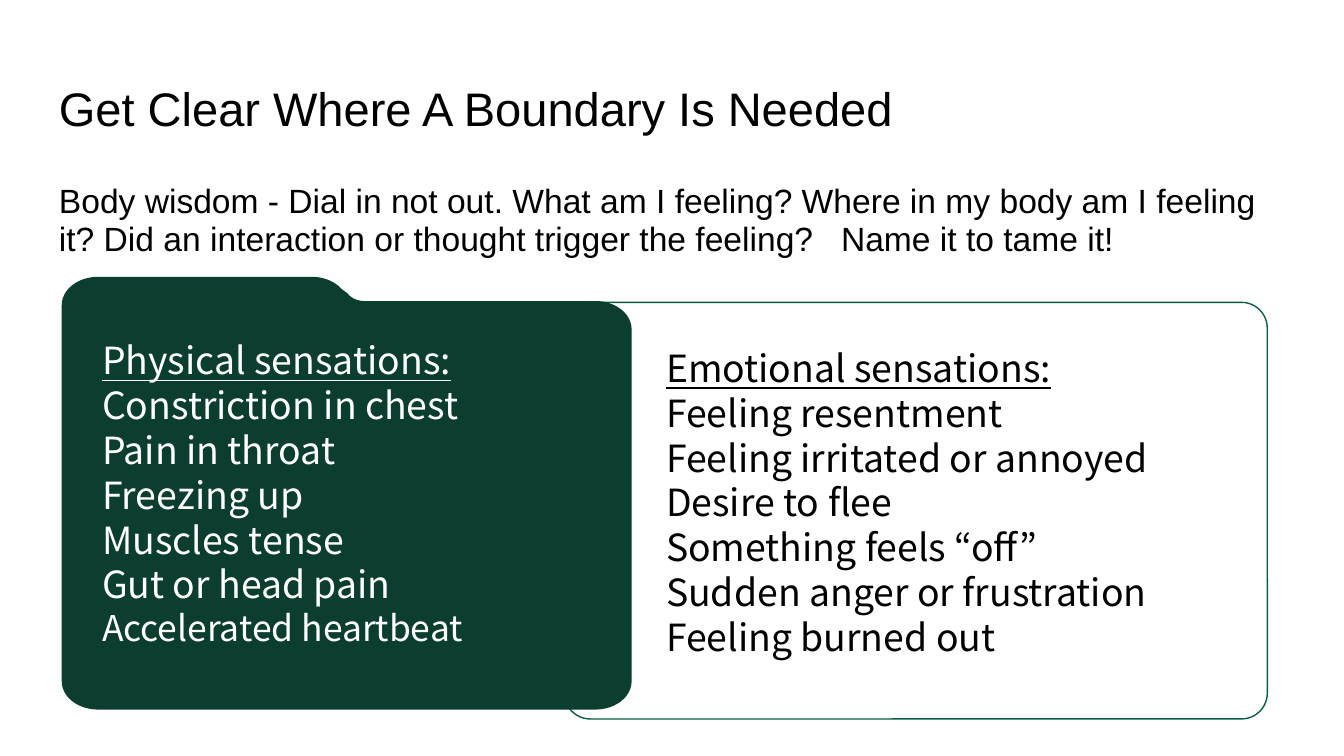
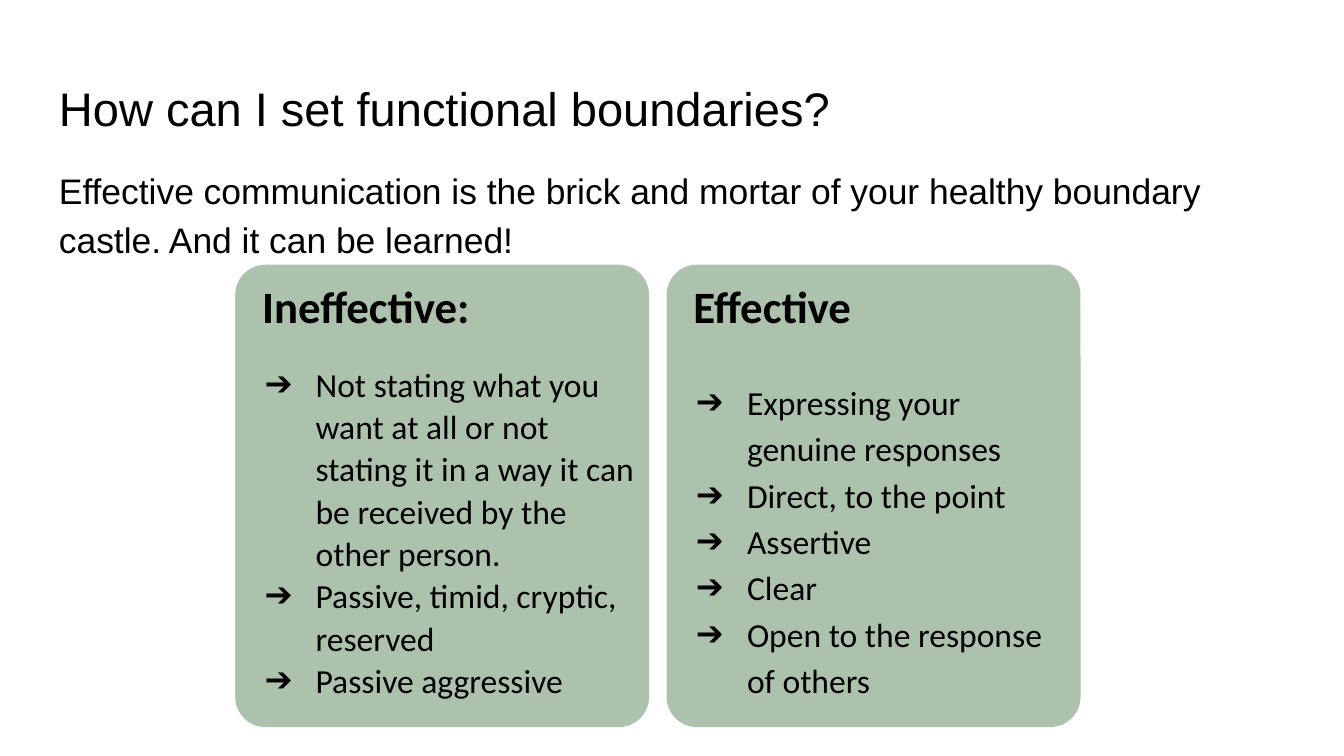
import math

from lxml import etree
from pptx import Presentation
from pptx.dml.color import RGBColor
from pptx.enum import shapes, text
from pptx.oxml import ns
from pptx.util import Inches, Pt

COLORS = {"ink": "000000", "white": "FEFEFE", "folder": "0C3E30",
          "outline": "085D46", "card": "ADC2AC"}
TITLE_FONT, PANEL_FONT, CARD_FONT = "Arial", "Noto Sans CJK KR", "Calibri"

SENSATIONS = {
    "title": "Get Clear Where A Boundary Is Needed",
    "intro": "Body wisdom - Dial in not out. What am I feeling? Where in my body "
             "am I feeling it? Did an interaction or thought trigger the feeling?   "
             "Name it to tame it!",
    "physical": ["Physical sensations:", "Constriction in chest", "Pain in throat",
                 "Freezing up", "Muscles tense", "Gut or head pain",
                 "Accelerated heartbeat"],
    "emotional": ["Emotional sensations:", "Feeling resentment",
                  "Feeling irritated or annoyed", "Desire to flee",
                  "Something feels “off”", "Sudden anger or frustration",
                  "Feeling burned out"],
}
COMMUNICATION = {
    "title": "How can I set functional boundaries?",
    "intro": "Effective communication is the brick and mortar of your healthy "
             "boundary castle. And it can be learned!",
    "cards": [
        ("Ineffective:", 1.05,
         ["Not stating what you want at all or not stating it in a way it can be "
          "received by the other person.",
          "Passive, timid, cryptic, reserved", "Passive aggressive"]),
        ("Effective", 1.15,
         ["Expressing your genuine responses", "Direct, to the point", "Assertive",
          "Clear", "Open to the response of others"]),
    ],
}

CARD_LEFT, CARD_TOP, CARD_WIDTH, CARD_HEIGHT, CARD_GAP = 1.75, 1.97, 3.08, 3.44, 0.13
LIST_DROP = 0.63


def rgb(name):
    return RGBColor.from_string(COLORS[name])


def write(shape, lines, font, size, color="ink", spacing=None, bold=False,
          insets=(0.1, 0.1, 0.1, 0.1), anchor=text.MSO_ANCHOR.TOP, bullet=None):
    """Fill a shape with one paragraph per line; insets run left, top, right, bottom."""
    frame = shape.text_frame
    frame.word_wrap = True
    frame.vertical_anchor = anchor
    (frame.margin_left, frame.margin_top,
     frame.margin_right, frame.margin_bottom) = map(Inches, insets)
    for number, line in enumerate(lines):
        para = frame.add_paragraph() if number else frame.paragraphs[0]
        para.text = line
        para.alignment = text.PP_ALIGN.LEFT
        if spacing:
            para.line_spacing = spacing
        if bullet:
            add_bullet(para, bullet, font)
        para.font.name = font
        para.font.size = Pt(size)
        para.font.bold = bold
        para.font.color.rgb = rgb(color)
    return frame.paragraphs


def add_bullet(para, symbol, font):
    props = para._p.get_or_add_pPr()
    props.set("marL", str(Inches(0.5)))
    props.set("indent", str(Inches(-0.38)))
    tint = etree.SubElement(props, ns.qn("a:buClr"))
    etree.SubElement(tint, ns.qn("a:srgbClr"), val=COLORS["ink"])
    etree.SubElement(props, ns.qn("a:buFont"), typeface=font)
    etree.SubElement(props, ns.qn("a:buChar"), char=symbol)


def add_text(page, left, top, width, height, lines, font, size, **style):
    box = page.shapes.add_textbox(*map(Inches, (left, top, width, height)))
    return write(box, lines, font, size, **style)


def paint(shape, fill=None, line=None):
    shape.shadow.inherit = False
    if fill:
        shape.fill.solid()
        shape.fill.fore_color.rgb = rgb(fill)
    else:
        shape.fill.background()
    if line:
        shape.line.color.rgb = rgb(line)
        shape.line.width = Pt(0.75)
    else:
        shape.line.fill.background()


def add_rounded(page, left, top, width, height, rounding, **colors):
    shape = page.shapes.add_shape(shapes.MSO_SHAPE.ROUNDED_RECTANGLE,
                                  *map(Inches, (left, top, width, height)))
    shape.adjustments[0] = rounding
    paint(shape, **colors)
    return shape


def arc(center_x, center_y, radius_x, radius_y, start, end, steps=12):
    """Points along an ellipse, in degrees clockwise from the right."""
    angles = [math.radians(start + (end - start) * i / steps) for i in range(steps + 1)]
    return [(Inches(center_x + radius_x * math.cos(a)),
             Inches(center_y + radius_y * math.sin(a))) for a in angles]


def add_folder(page):
    left, top, right, bottom = 0.46, 2.06, 4.7, 5.28
    shoulder, tab_end, notch_end = 2.24, 2.32, 2.71
    rx, ry = 0.27, 0.21
    points = (arc(left + rx, top + ry, rx, ry, 180, 270)
              + arc(tab_end, top + ry, rx, ry, 270, 325)
              + arc(notch_end, shoulder - 0.11, 0.14, 0.11, 150, 90)
              + arc(right - rx, shoulder + ry, rx, ry, 270, 360)
              + arc(right - rx, bottom - ry, rx, ry, 0, 90)
              + arc(left + rx, bottom - ry, rx, ry, 90, 180))
    builder = page.shapes.build_freeform(*points[0], scale=1.0)
    builder.add_line_segments(points[1:], close=True)
    folder = builder.convert_to_shape()
    paint(folder, fill="folder")
    return folder


def add_page(deck, content, intro_top, intro_size, intro_spacing):
    page = deck.slides.add_slide(deck.slide_layouts[6])
    add_text(page, 0.34, 0.49, 9.32, 0.63, [content["title"]], TITLE_FONT, 25.2)
    add_text(page, 0.34, intro_top, 9.32, 3.74, [content["intro"]], TITLE_FONT,
             intro_size, spacing=intro_spacing)
    return page


def build_sensations(deck):
    page = add_page(deck, SENSATIONS, 1.26, 18, 0.95)
    panel = add_rounded(page, 4.2, 2.25, 5.23, 3.1, 0.062, line="outline")
    emotional = write(panel, SENSATIONS["emotional"], PANEL_FONT, 20,
                      insets=(0.7, 0.2, 0.1, 0.33), anchor=text.MSO_ANCHOR.MIDDLE)
    physical = write(add_folder(page), SENSATIONS["physical"], PANEL_FONT, 20,
                     color="white", insets=(0.3, 0.2, 0.3, 0.2),
                     anchor=text.MSO_ANCHOR.MIDDLE)
    physical[-1].font.size = Pt(19)
    for heading in (emotional[0], physical[0]):
        heading.font.underline = True


def build_communication(deck):
    page = add_page(deck, COMMUNICATION, 1.11, 19, 1.15)
    for column, (heading, spacing, habits) in enumerate(COMMUNICATION["cards"]):
        left = CARD_LEFT + column * (CARD_WIDTH + CARD_GAP)
        add_rounded(page, left, CARD_TOP, CARD_WIDTH, CARD_HEIGHT, 0.073, fill="card")
        add_text(page, left, CARD_TOP + LIST_DROP, CARD_WIDTH, CARD_HEIGHT - LIST_DROP,
                 habits, CARD_FONT, 18, spacing=spacing, bullet="➔",
                 insets=(0.1, 0.1, 0.1, 0.2), anchor=text.MSO_ANCHOR.BOTTOM)
        add_text(page, left, CARD_TOP, CARD_WIDTH, 1.01, [heading], CARD_FONT, 24,
                 bold=True, insets=(0.2, 0.1, 0.2, 0.1))


def main():
    deck = Presentation()
    deck.slide_width = Inches(10)
    deck.slide_height = Inches(10 * 9 / 16)
    build_sensations(deck)
    build_communication(deck)
    deck.save("out.pptx")


if __name__ == "__main__":
    main()
